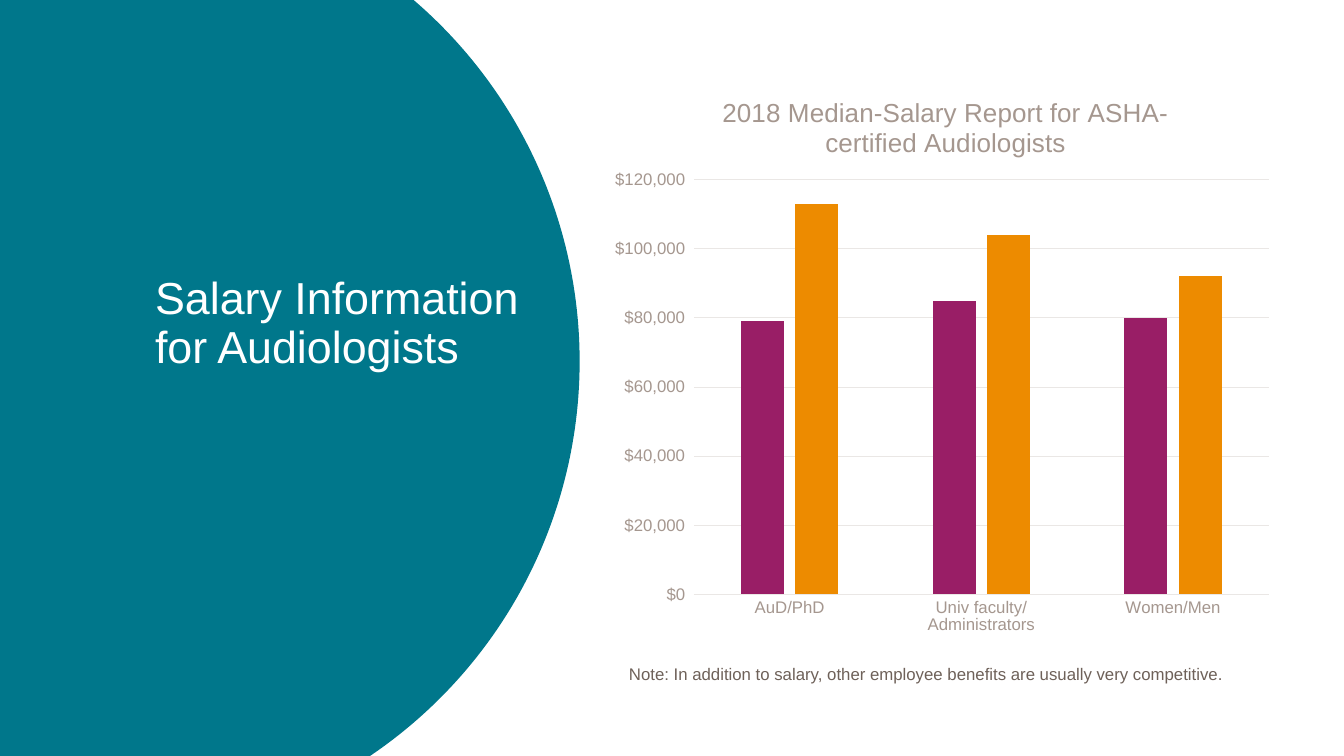
from dataclasses import dataclass

from lxml.etree import SubElement
from pptx import Presentation
from pptx.chart.data import CategoryChartData
from pptx.dml.color import RGBColor
from pptx.enum.chart import XL_CHART_TYPE, XL_TICK_MARK
from pptx.enum.shapes import MSO_SHAPE
from pptx.enum.text import MSO_ANCHOR
from pptx.oxml.ns import qn
from pptx.util import Inches, Pt


@dataclass(frozen=True)
class Theme:
    font: str = "Arial"
    teal: str = "00778B"
    white: str = "FFFFFF"
    brown: str = "6E6159"
    taupe: str = "A5978F"
    grid: str = "EAE7E5"
    plum: str = "991E66"
    orange: str = "ED8B00"
    heading_size: float = 32
    chart_title_size: float = 18.6
    small_size: float = 12
    hairline: float = 0.75


THEME = Theme()


def style_font(font, size, color):
    font.name = THEME.font
    font.size = Pt(size)
    font.bold = False
    font.color.rgb = RGBColor.from_string(color)


def write(frame, text, *, size, color, spacing=None, anchor=None):
    """Put one formatted paragraph in a text frame."""
    paragraph = frame.paragraphs[0]
    paragraph.text = text
    for run in paragraph.runs:
        style_font(run.font, size, color)
    if spacing:
        paragraph.line_spacing = spacing
    if anchor is not None:
        frame.vertical_anchor = anchor


def place(parent, position, **shares):
    """Give a chart part a manual layout in shares of the chart."""
    layout = parent.find(qn("c:layout"))
    if layout is None:
        layout = SubElement(parent, qn("c:layout"))
        parent.insert(position, layout)
    manual = SubElement(layout, qn("c:manualLayout"))
    if "w" in shares:
        SubElement(manual, qn("c:layoutTarget")).set("val", "inner")
    for side in ("x", "y"):
        SubElement(manual, qn(f"c:{side}Mode")).set("val", "edge")
    for key, share in shares.items():
        SubElement(manual, qn(f"c:{key}")).set("val", str(share))


class SlideBuilder:
    """Places elements by percentages of the slide's width and height."""

    def __init__(self, deck, theme):
        self.deck = deck
        self.theme = theme
        self.slide = deck.slides.add_slide(deck.slide_layouts[6])

    def box(self, left, top, width, height):
        across, down = self.deck.slide_width / 100, self.deck.slide_height / 100
        return (round(left * across), round(top * down),
                round(width * across), round(height * down))

    def ellipse(self, area, color):
        disc = self.slide.shapes.add_shape(MSO_SHAPE.OVAL, *self.box(*area))
        disc.shadow.inherit = False
        disc.fill.solid()
        disc.fill.fore_color.rgb = RGBColor.from_string(color)
        disc.line.fill.background()

    def text(self, area, text, **style):
        frame = self.slide.shapes.add_textbox(*self.box(*area)).text_frame
        frame.word_wrap = True
        write(frame, text, **style)

    def columns(self, area, title, categories, series):
        theme = self.theme
        data = CategoryChartData()
        data.categories = categories
        for name, values, _ in series:
            data.add_series(name, values)
        chart = self.slide.shapes.add_chart(
            XL_CHART_TYPE.COLUMN_CLUSTERED, *self.box(*area), data).chart
        style_font(chart.font, theme.small_size, theme.brown)
        chart.has_legend = False

        # Title and plot positions
        chart.has_title = True
        write(chart.chart_title.text_frame, title,
              size=theme.chart_title_size, color=theme.taupe)
        place(chart.chart_title.element, 1, x=0.17, y=0.04)
        place(chart.element.find(".//" + qn("c:plotArea")), 0,
              x=0.135, y=0.194, w=0.845, h=0.717)

        # Columns
        plot = chart.plots[0]
        plot.gap_width, plot.overlap = 219, -27
        plot.vary_by_categories = False
        for drawn, (_, _, color) in zip(plot.series, series):
            drawn.format.fill.solid()
            drawn.format.fill.fore_color.rgb = RGBColor.from_string(color)

        # Axes
        category_axis, value_axis = chart.category_axis, chart.value_axis
        for axis in (category_axis, value_axis):
            axis.major_tick_mark = axis.minor_tick_mark = XL_TICK_MARK.NONE
            style_font(axis.tick_labels.font, theme.small_size, theme.taupe)
        value_axis.minimum_scale, value_axis.maximum_scale = 0, 120000
        value_axis.major_unit = 20000
        value_axis.tick_labels.number_format = '"$"#,##0_);[Red]\\("$"#,##0\\)'
        value_axis.tick_labels.number_format_is_linked = False
        value_axis.format.line.fill.background()
        for line in (category_axis.format.line,
                     value_axis.major_gridlines.format.line):
            line.color.rgb = RGBColor.from_string(theme.grid)
            line.width = Pt(theme.hairline)


def main():
    deck = Presentation()
    deck.slide_width, deck.slide_height = Inches(13.33), Inches(7.5)
    page = SlideBuilder(deck, THEME)

    # Heading on the teal disc
    page.ellipse((-27.76, -15.2, 70.89, 126), THEME.teal)
    page.text((10.8, 29.47, 43.51, 20.53),
              "Salary Information\vfor Audiologists",
              size=THEME.heading_size, color=THEME.white,
              spacing=0.9, anchor=MSO_ANCHOR.BOTTOM)

    # Note below the chart
    page.text((46.06, 87.47, 49.44, 10),
              "Note: In addition to salary, other employee benefits "
              "are usually very competitive.",
              size=THEME.small_size, color=THEME.brown, spacing=0.9)

    # Salary chart
    page.columns(
        (44.79, 8.93, 50.64, 76.53),
        "2018 Median-Salary Report for ASHA-certified Audiologists",
        ["AuD/PhD", "Univ faculty/Administrators", "Women/Men"],
        [("Series 1", (79000, 85000, 80000), THEME.plum),
         ("Series 2", (113000, 104000, 92000), THEME.orange)])

    deck.save("out.pptx")


if __name__ == "__main__":
    main()
